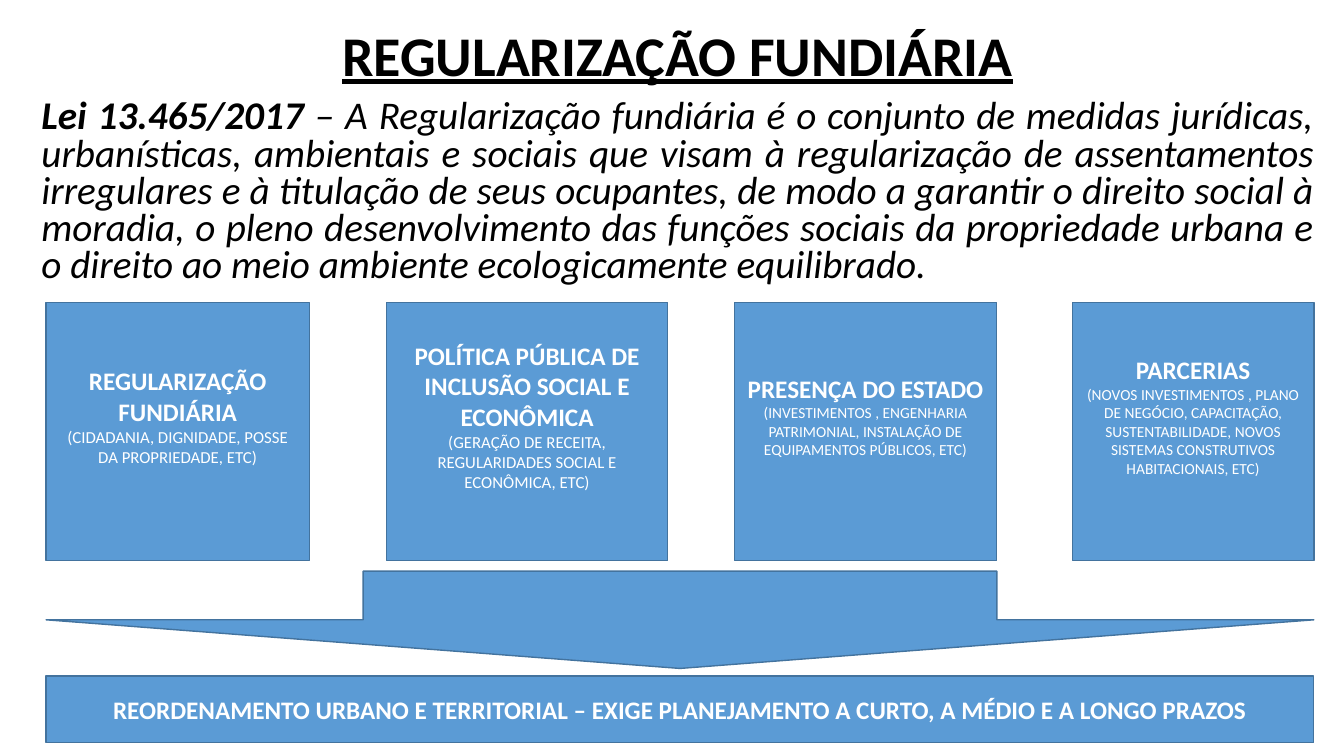
import pptx
import pptx.util
import pptx.dml.color
import pptx.enum.shapes
import pptx.enum.text

Pt = pptx.util.Pt
SHAPES = pptx.enum.shapes.MSO_SHAPE
ALIGN = pptx.enum.text.PP_ALIGN
ANCHOR = pptx.enum.text.MSO_ANCHOR

COLORS = {"fill": "5B9BD5", "line": "43739E", "light": "FFFFFF", "dark": "000000"}
FONT = "Calibri"

TITLE = "REGULARIZAÇÃO FUNDIÁRIA"
LAW = "Lei 13.465/2017 "
DEFINITION = (
    "– A Regularização fundiária é o conjunto de medidas jurídicas, urbanísticas, "
    "ambientais e sociais que visam à regularização de assentamentos irregulares e à "
    "titulação de seus ocupantes, de modo a garantir o direito social à moradia, o pleno "
    "desenvolvimento das funções sociais da propriedade urbana e o direito ao meio "
    "ambiente ecologicamente equilibrado."
)
# left, width, heading, detail, detail size
CARDS = [
    (33, 188, "REGULARIZAÇÃO FUNDIÁRIA",
     "(CIDADANIA, DIGNIDADE, POSSE DA PROPRIEDADE, ETC)", 12),
    (276, 201, "POLÍTICA PÚBLICA DE INCLUSÃO SOCIAL E ECONÔMICA",
     "(GERAÇÃO DE RECEITA, REGULARIDADES SOCIAL E ECONÔMICA, ETC)", 12),
    (524.5, 187.5, "PRESENÇA DO ESTADO",
     "(INVESTIMENTOS , ENGENHARIA PATRIMONIAL, INSTALAÇÃO DE EQUIPAMENTOS PÚBLICOS, ETC)",
     11),
    (766, 172.5, "PARCERIAS",
     "(NOVOS INVESTIMENTOS , PLANO DE NEGÓCIO, CAPACITAÇÃO, SUSTENTABILIDADE, "
     "NOVOS SISTEMAS CONSTRUTIVOS HABITACIONAIS, ETC)", 11),
]
CONCLUSION = ("REORDENAMENTO URBANO E TERRITORIAL – EXIGE PLANEJAMENTO "
              "A CURTO, A MÉDIO E A LONGO PRAZOS")

LEFT, RIGHT = 33, 938.5
CARD_TOP, CARD_HEIGHT = 216, 184.5
ARROW_TOP, ARROW_HEIGHT = 408, 69.5
BAR_TOP, BAR_HEIGHT = 483, 47.5
TEXT_LEFT, TEXT_WIDTH = 22.5, 923
CARD_LIFT = 22  # extra bottom inset that raises the card text


def add_text(para, text, size=18, color="light", bold=False, italic=False,
             underline=False, align=ALIGN.CENTER, spacing=None):
    para.alignment = align
    para.space_before = Pt(0)
    if spacing:
        para.line_spacing = spacing
    span = para.add_run()
    span.text = text
    font = span.font
    font.name, font.size = FONT, Pt(size)
    font.bold, font.italic, font.underline = bold, italic, underline
    font.color.rgb = pptx.dml.color.RGBColor.from_string(COLORS[color])


def add_block(page, kind, left, top, width, height):
    block = page.shapes.add_shape(kind, Pt(left), Pt(top), Pt(width), Pt(height))
    block.shadow.inherit = False
    block.fill.solid()
    block.fill.fore_color.rgb = pptx.dml.color.RGBColor.from_string(COLORS["fill"])
    block.line.color.rgb = pptx.dml.color.RGBColor.from_string(COLORS["line"])
    block.line.width = Pt(1)
    block.text_frame.word_wrap = True
    block.text_frame.vertical_anchor = ANCHOR.MIDDLE
    return block


def main():
    deck = pptx.Presentation()
    deck.slide_width, deck.slide_height = Pt(960), Pt(540)
    page = deck.slides.add_slide(deck.slide_layouts[5])

    title = page.shapes.title
    title.left, title.top = Pt(TEXT_LEFT), Pt(20)
    title.width, title.height = Pt(TEXT_WIDTH), Pt(46)
    title.text_frame.vertical_anchor = ANCHOR.TOP
    title.text_frame.auto_size = pptx.enum.text.MSO_AUTO_SIZE.NONE
    add_text(title.text_frame.paragraphs[0], TITLE, size=40, color="dark",
             bold=True, underline=True, spacing=0.8)

    body = page.shapes.add_textbox(Pt(TEXT_LEFT), Pt(68), Pt(TEXT_WIDTH), Pt(146))
    body.text_frame.word_wrap = True
    for text, bold in ((LAW, True), (DEFINITION, False)):
        add_text(body.text_frame.paragraphs[0], text, size=28, color="dark", bold=bold,
                 italic=True, align=ALIGN.JUSTIFY, spacing=0.79)

    for left, width, heading, detail, detail_size in CARDS:
        card = add_block(page, SHAPES.RECTANGLE, left, CARD_TOP, width, CARD_HEIGHT)
        frame = card.text_frame
        frame.margin_bottom = Pt(3.6 + CARD_LIFT)
        add_text(frame.paragraphs[0], heading, bold=True)
        add_text(frame.add_paragraph(), detail, size=detail_size)

    add_block(page, SHAPES.DOWN_ARROW, LEFT, ARROW_TOP, RIGHT - LEFT, ARROW_HEIGHT)
    bar = add_block(page, SHAPES.RECTANGLE, LEFT, BAR_TOP, RIGHT - LEFT, BAR_HEIGHT)
    add_text(bar.text_frame.paragraphs[0], CONCLUSION, bold=True)

    deck.save("out.pptx")


if __name__ == "__main__":
    main()
